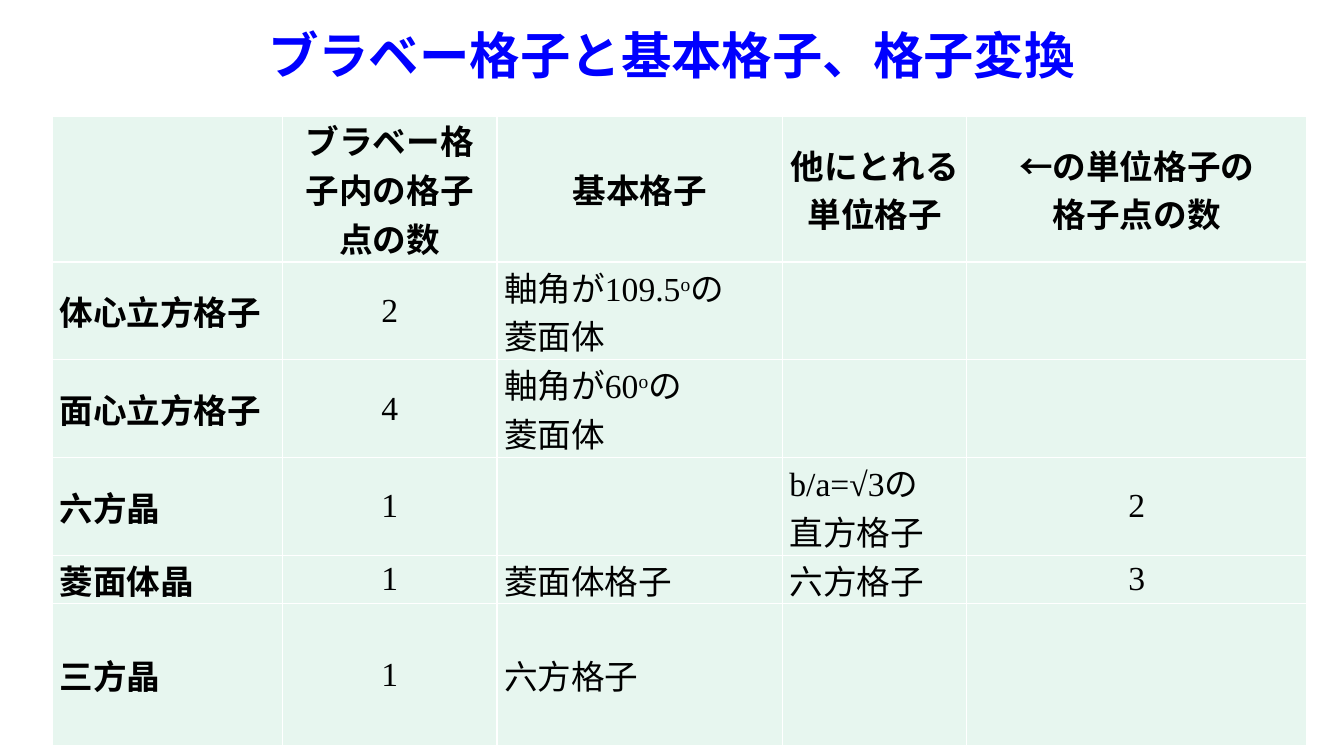
"""Build a slide with a table of Bravais lattices and their primitive lattices."""
from typing import NamedTuple

from lxml import etree
from pptx import Presentation
from pptx.dml.color import RGBColor
from pptx.enum.text import MSO_ANCHOR, PP_ALIGN
from pptx.oxml.ns import qn
from pptx.slide import Slide
from pptx.table import _Cell
from pptx.text.text import TextFrame
from pptx.util import Inches, Pt

LEFT, CENTER = PP_ALIGN.LEFT, PP_ALIGN.CENTER
MIDDLE = MSO_ANCHOR.MIDDLE
COLORS = {"title": "0000FF", "text": "000000", "cell": "E7F6EF", "border": "FFFFFF"}
FONT_NAME = "Times New Roman"
BORDER_SIDES = ("a:lnL", "a:lnR", "a:lnT", "a:lnB")
SUPERSCRIPT_MARK = "^"


class Column(NamedTuple):
    width: float
    alignment: PP_ALIGN


class Row(NamedTuple):
    height: float
    texts: tuple[str, str, str, str, str]


COLUMNS = (
    Column(2.28, LEFT),
    Column(2.13, CENTER),
    Column(2.83, LEFT),
    Column(1.83, LEFT),
    Column(3.37, CENTER),
)
ROWS = (
    Row(1.45, ("", "ブラベー格子内の格子点の数", "基本格子",
               "他にとれる\v単位格子", "←の単位格子の\n格子点の数")),
    Row(0.97, ("体心立方格子", "2", "軸角が109.5^o^の\n菱面体", "", "")),
    Row(0.97, ("面心立方格子", "4", "軸角が60^o^の\n菱面体", "", "")),
    Row(0.97, ("六方晶", "1", "", "b/a=√3の\v直方格子", "2")),
    Row(0.48, ("菱面体晶", "1", "菱面体格子", "六方格子", "3")),
    Row(1.41, ("三方晶", "1", "六方格子", "", "")),
)


def write_text(frame: TextFrame, text: str, size: int, color: str,
               bold: bool, alignment: PP_ALIGN) -> None:
    for line_index, line in enumerate(text.split("\n")):
        paragraph = frame.add_paragraph() if line_index else frame.paragraphs[0]
        paragraph.alignment = alignment
        paragraph.font.name = FONT_NAME
        paragraph.font.size = Pt(size)
        paragraph.font.bold = bold
        paragraph.font.color.rgb = RGBColor.from_string(COLORS[color])
        if SUPERSCRIPT_MARK not in line:
            paragraph.text = line
            continue
        for piece_index, piece in enumerate(line.split(SUPERSCRIPT_MARK)):
            run = paragraph.add_run()
            run.text = piece
            if piece_index % 2:
                run._r.get_or_add_rPr().set("baseline", "30000")


def style_cell(cell: _Cell) -> None:
    properties = cell._tc.get_or_add_tcPr()
    for side in BORDER_SIDES:
        border = etree.SubElement(properties, qn(side), w=str(Pt(1)))
        fill = etree.SubElement(border, qn("a:solidFill"))
        etree.SubElement(fill, qn("a:srgbClr"), val=COLORS["border"])
    cell.fill.solid()
    cell.fill.fore_color.rgb = RGBColor.from_string(COLORS["cell"])
    cell.vertical_anchor = MIDDLE
    cell.margin_left = cell.margin_right = Inches(0.07)
    cell.margin_top = cell.margin_bottom = 0


def add_title(slide: Slide) -> None:
    title = slide.shapes.add_textbox(Inches(1.66), 0, Inches(10), Inches(1.08))
    frame = title.text_frame
    frame.word_wrap = True
    frame.vertical_anchor = MIDDLE
    write_text(frame, "ブラベー格子と基本格子、格子変換", 36, "title", True, CENTER)


def add_lattice_table(slide: Slide) -> None:
    width = sum(column.width for column in COLUMNS)
    height = sum(row.height for row in ROWS)
    table = slide.shapes.add_table(
        len(ROWS), len(COLUMNS), Inches(0.52), Inches(1.15),
        Inches(width), Inches(height)).table
    table.first_row = False
    table.horz_banding = False
    for column_index, column in enumerate(COLUMNS):
        table.columns[column_index].width = Inches(column.width)
    for row_index, row in enumerate(ROWS):
        table.rows[row_index].height = Inches(row.height)
        for column_index, (column, text) in enumerate(zip(COLUMNS, row.texts)):
            cell = table.cell(row_index, column_index)
            style_cell(cell)
            if text:
                is_header = row_index == 0
                write_text(cell.text_frame, text, 24, "text",
                           is_header or column_index == 0,
                           CENTER if is_header else column.alignment)


def main() -> None:
    presentation = Presentation()
    presentation.slide_width = Inches(13.33)
    presentation.slide_height = Inches(7.5)
    slide = presentation.slides.add_slide(presentation.slide_layouts[6])
    add_title(slide)
    add_lattice_table(slide)
    presentation.save("out.pptx")


if __name__ == "__main__":
    main()
